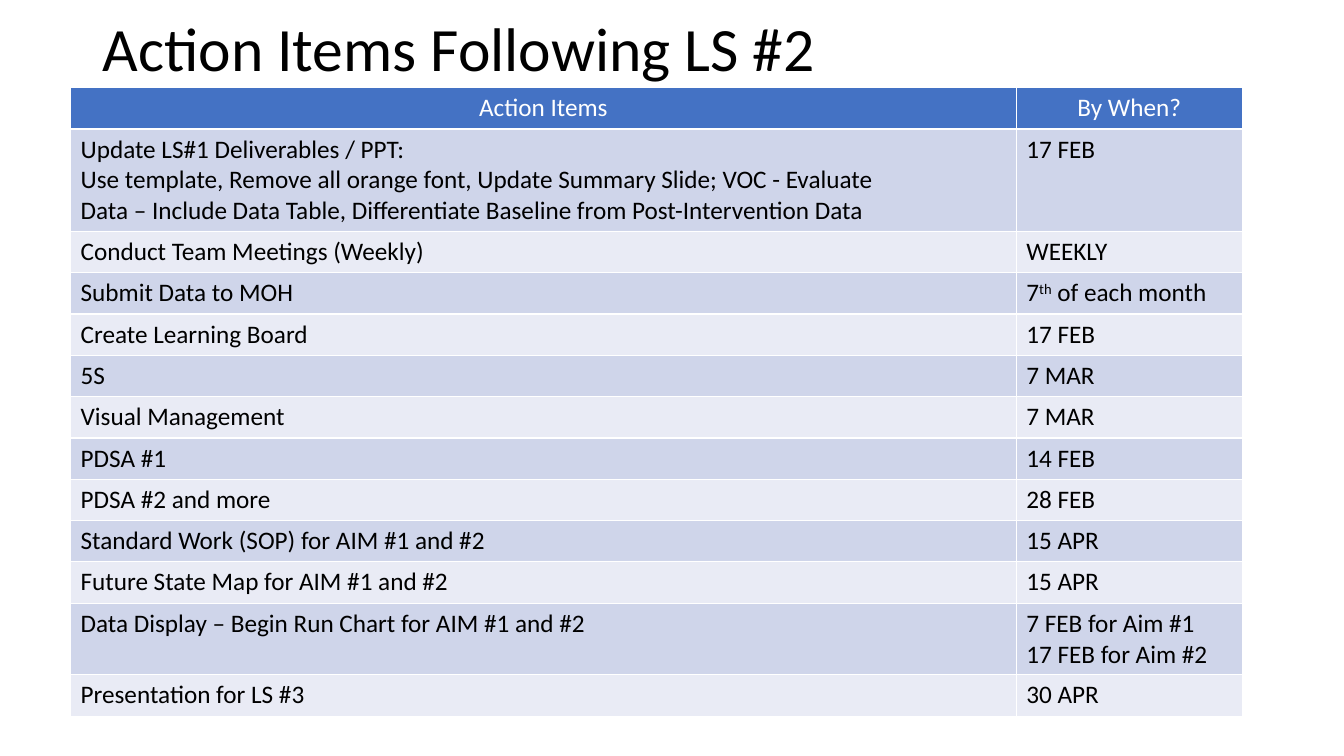
from pptx import Presentation
from pptx.dml.color import RGBColor
from pptx.enum import text
from pptx.util import Inches, Pt

COLOURS = {
    "header": "4472C4",
    "odd": "CFD5EA",
    "even": "E9EBF5",
    "black": "000000",
    "white": "FFFFFF",
}
FONT = "Calibri"
COLUMN_WIDTHS = (9.38, 2.24)
ROW_HEIGHT = 0.41
HEADINGS = ("Action Items", "By When?")
# Text between carets is superscript.
ACTIONS = [
    ("Update LS#1 Deliverables / PPT:\n"
     "Use template, Remove all orange font, Update Summary Slide; VOC - Evaluate\n"
     "Data – Include Data Table, Differentiate Baseline from Post-Intervention Data",
     "17 FEB"),
    ("Conduct Team Meetings (Weekly)", "WEEKLY"),
    ("Submit Data to MOH", "7^th^ of each month"),
    ("Create Learning Board", "17 FEB"),
    ("5S", "7 MAR"),
    ("Visual Management", "7 MAR"),
    ("PDSA #1", "14 FEB"),
    ("PDSA #2 and more", "28 FEB"),
    ("Standard Work (SOP) for AIM #1 and #2", "15 APR"),
    ("Future State Map for AIM #1 and #2", "15 APR"),
    ("Data Display – Begin Run Chart for AIM #1 and #2",
     "7 FEB for Aim #1\n17 FEB for Aim #2"),
    ("Presentation for LS #3", "30 APR"),
]


def format_paragraph(paragraph, size, colour, alignment):
    paragraph.alignment = alignment
    font = paragraph.font
    font.name = FONT
    font.size = Pt(size)
    font.bold = False
    font.color.rgb = RGBColor.from_string(COLOURS[colour])


def add_runs(paragraph, line):
    """Add a line as runs, raising the parts between carets."""
    for index, part in enumerate(line.split("^")):
        run = paragraph.add_run()
        run.text = part
        if index % 2:
            run.font._element.set("baseline", "30000")


def fill_cell(cell, content, fill, colour, alignment):
    cell.fill.solid()
    cell.fill.fore_color.rgb = RGBColor.from_string(COLOURS[fill])
    frame = cell.text_frame
    for index, line in enumerate(content.split("\n")):
        paragraph = frame.add_paragraph() if index else frame.paragraphs[0]
        add_runs(paragraph, line)
        format_paragraph(paragraph, 18, colour, alignment)


def set_title(slide, content):
    title = slide.shapes.title
    title.left, title.top = Inches(0.92), Inches(0.06)
    title.width, title.height = Inches(11.5), Inches(0.91)
    frame = title.text_frame
    frame.text = content
    frame.vertical_anchor = text.MSO_ANCHOR.MIDDLE
    paragraph = frame.paragraphs[0]
    paragraph.line_spacing = 0.9
    format_paragraph(paragraph, 44, "black", text.PP_ALIGN.LEFT)


def add_action_table(slide):
    rows = [HEADINGS, *ACTIONS]
    table = slide.shapes.add_table(
        len(rows), len(COLUMN_WIDTHS), Inches(0.7), Inches(0.87),
        Inches(sum(COLUMN_WIDTHS)), Inches(ROW_HEIGHT * len(rows))).table
    for column, width in zip(table.columns, COLUMN_WIDTHS):
        column.width = Inches(width)
    for row_index, row in enumerate(rows):
        table.rows[row_index].height = Inches(ROW_HEIGHT)
        if row_index == 0:
            style = ("header", "white", text.PP_ALIGN.CENTER)
        else:
            band = "odd" if row_index % 2 else "even"
            style = (band, "black", text.PP_ALIGN.LEFT)
        for column_index, content in enumerate(row):
            fill_cell(table.cell(row_index, column_index), content, *style)


def main():
    presentation = Presentation()
    presentation.slide_width = Inches(13.33)
    presentation.slide_height = Inches(7.5)
    slide = presentation.slides.add_slide(presentation.slide_layouts[5])
    set_title(slide, "Action Items Following LS #2")
    add_action_table(slide)
    presentation.save("out.pptx")


if __name__ == "__main__":
    main()
